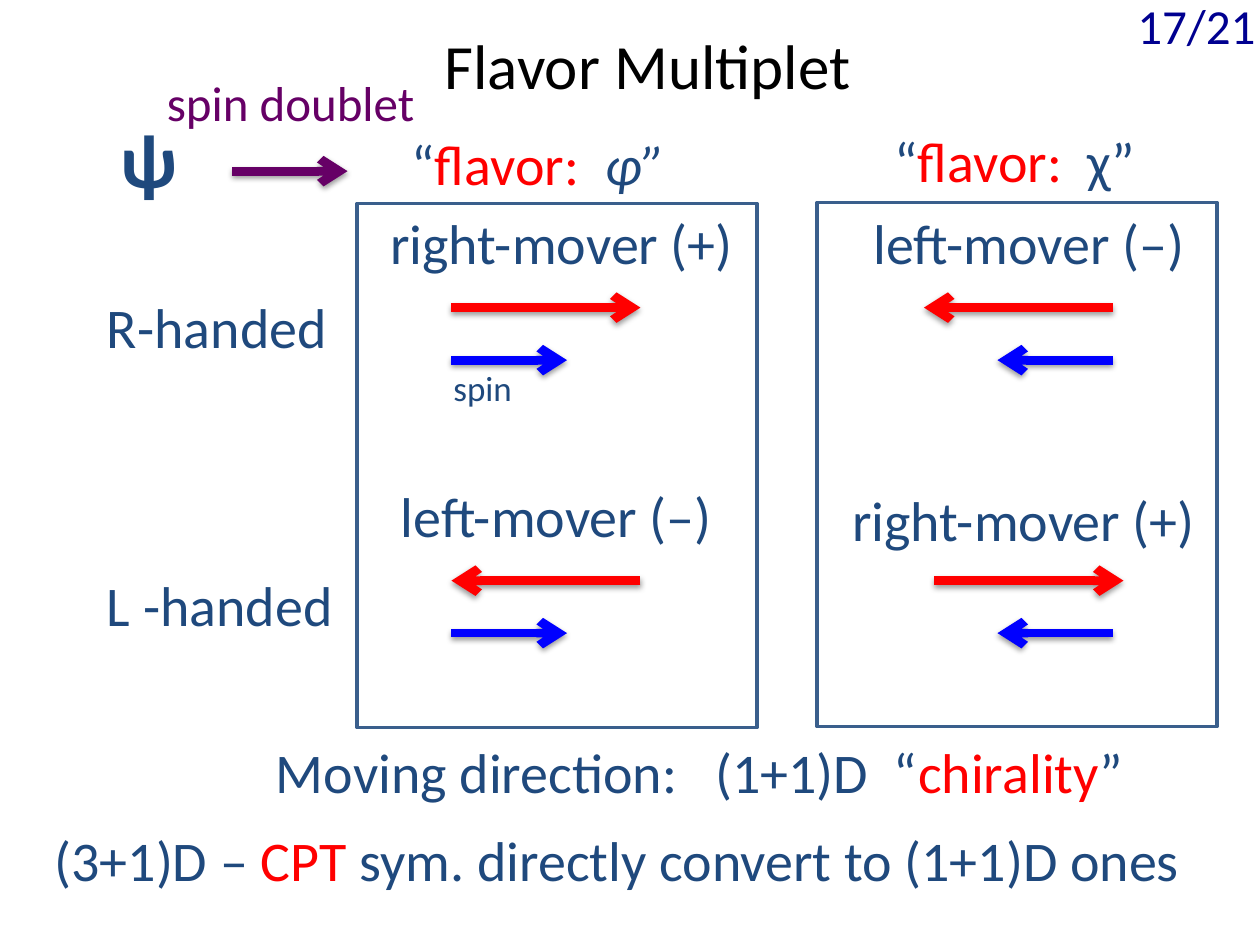
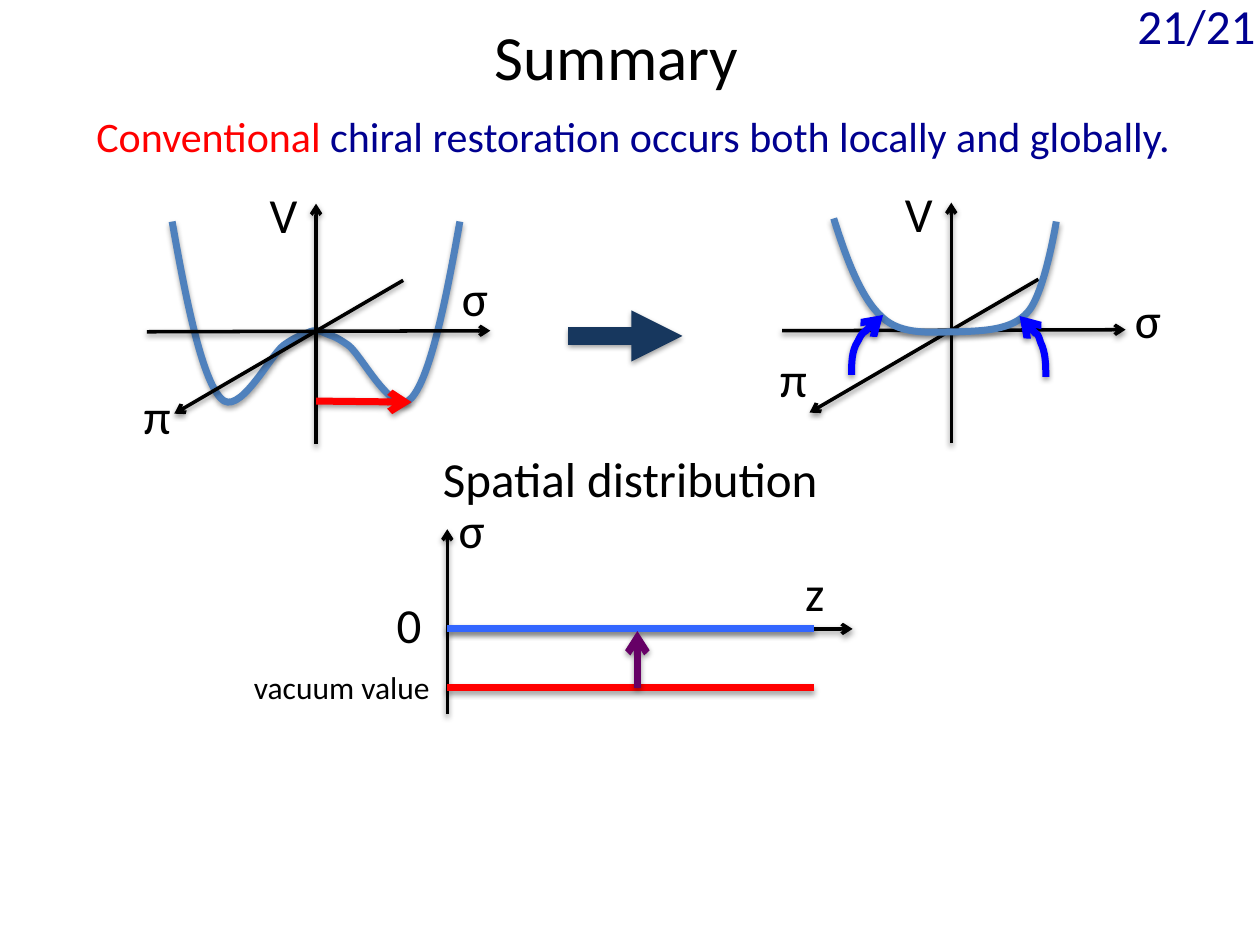
from lxml import etree
from pptx import Presentation
from pptx.dml.color import RGBColor
from pptx.enum.shapes import MSO_CONNECTOR, MSO_SHAPE
from pptx.enum.text import MSO_ANCHOR, PP_ALIGN
from pptx.oxml.ns import qn
from pptx.util import Inches, Pt

STRAIGHT = MSO_CONNECTOR.STRAIGHT
RECTANGLE = MSO_SHAPE.RECTANGLE
MIDDLE = MSO_ANCHOR.MIDDLE
LEFT, CENTER, RIGHT = PP_ALIGN.LEFT, PP_ALIGN.CENTER, PP_ALIGN.RIGHT

FONT = "Calibri"
COLUMNS, ROWS = 120, 90
CELL = Inches(10) / COLUMNS
TITLE_ONLY = 5

COLORS = {
    "black": "000000",
    "slate": "1F497D",
    "frame": "3A5F8C",
    "curve": "4F81BD",
    "navy": "000090",
    "dark": "17375E",
    "red": "FF0000",
    "blue": "0000FF",
    "sky": "3366FF",
    "purple": "660066",
}

WELL_HALF = [
    (13.7, -10.4), (12.4, -3), (10.9, 4.4), (9.1, 6.4), (7.4, 8.4), (4.4, 2.4), (3.1, 1.4),
    (1.7, 0.4), (1.4, 0.5), (0.8, 0.2), (0.4, 0), (0.2, 0), (0, 0),
]
FLAT_BOWL = [
    (-11.2, -10.6), (-10, -6.8), (-8.6, -3), (-6.6, -1.2), (-4.7, 0.6), (-1.7, 0.2), (0.6, 0.2),
    (2.9, 0.1), (5.8, 0.1), (7.3, -1.7), (8.9, -3.5), (10, -10.3), (10, -10.3),
]
LEFT_LIFT = [
    (-9.5, 4.3), (-9.5, 3.2), (-9.5, 2), (-8.9, 1.1), (-8.4, 0.1), (-6.5, -1.4), (-6.5, -1.4),
]
RIGHT_LIFT = [
    (9, 4.5), (9, 3.4), (9, 2.2), (8.5, 1.2), (8.2, 0.2), (6.5, -1.3), (6.5, -1.3),
]


def cells(*counts):
    return [round(count * CELL) for count in counts]


def rgb(name):
    return RGBColor.from_string(COLORS[name])


def shift(points, origin):
    return [(origin[0] + x, origin[1] + y) for x, y in points]


def set_font(font, size, color):
    font.name = FONT
    font.size = Pt(size)
    font.color.rgb = rgb(color)


def add_text(page, left, top, width, content, size=32, color="slate", align=LEFT, bold=None):
    spans = [(content, color)] if isinstance(content, str) else content
    height = size * 0.2 + 1.2
    box = page.shapes.add_textbox(*cells(left, top, width, height))
    box.text_frame.word_wrap = True
    para = box.text_frame.paragraphs[0]
    para.alignment = align
    set_font(para.font, size, color)
    para.font.bold = bold
    for text, span_color, *style in spans:
        span = para.add_run()
        span.text = text
        if span_color != color:
            span.font.color.rgb = rgb(span_color)
        if "italic" in style:
            span.font.italic = True
    return box


def add_page(deck, title, number, left, top, width):
    page = deck.slides.add_slide(deck.slide_layouts[TITLE_ONLY])
    heading = page.shapes.title
    heading.left, heading.top, heading.width, heading.height = cells(left, top, width, 8.5)
    heading.text_frame.text = title
    heading.text_frame.vertical_anchor = MIDDLE
    para = heading.text_frame.paragraphs[0]
    para.alignment = CENTER
    set_font(para.font, 36, "black")
    counter = add_text(page, 105, -1, 16, number, 28, "navy", RIGHT)
    counter.text_frame.margin_right = Inches(0.12)
    return page


def style_stroke(shape, color, width, head):
    shape.line.color.rgb = rgb(color)
    shape.line.width = Pt(width)
    properties = shape._element.spPr
    if head:
        etree.SubElement(properties.find(qn("a:ln")), qn("a:tailEnd"), type=head)
    effects = etree.SubElement(properties, qn("a:effectLst"))
    shadow = etree.SubElement(
        effects, qn("a:outerShdw"), blurRad="40000", dist="20000", dir="5400000", rotWithShape="0"
    )
    shade = etree.SubElement(shadow, qn("a:srgbClr"), val=COLORS["black"])
    etree.SubElement(shade, qn("a:alpha"), val="38000")


def add_line(page, start, end, color="black", width=2, head="arrow"):
    line = page.shapes.add_connector(STRAIGHT, *cells(*start, *end))
    style_stroke(line, color, width, head)


def add_curve(page, points, color="curve", head=None):
    builder = page.shapes.build_freeform(*cells(*points[0]))
    builder.add_line_segments([cells(*point) for point in points[1:]], close=False)
    curve = builder.convert_to_shape()
    steps = list(curve._element.iter(qn("a:lnTo")))
    for first in range(0, len(steps), 3):
        bend = etree.Element(qn("a:cubicBezTo"))
        steps[first].addprevious(bend)
        for step in steps[first:first + 3]:
            bend.append(step[0])
            step.getparent().remove(step)
    curve.fill.background()
    style_stroke(curve, color, 4, head)


def add_panel(page, left, top):
    panel = page.shapes.add_shape(RECTANGLE, *cells(left, top, 38.1, 49.9))
    panel.fill.background()
    panel.line.color.rgb = rgb("frame")
    panel.line.width = Pt(2)
    panel.shadow.inherit = False


def add_mover(page, row, label, label_at, motion, spin):
    add_text(page, *label_at, 36, label)
    for (start, end), color, offset in ((motion, "red", 0), (spin, "blue", 5)):
        add_line(page, (start, row + offset), (end, row + offset), color, 5)


def add_potential_axes(page, origin, sigma_at, pi_at):
    for start, end in (
        ((-16.1, 0.1), (16.6, 0)),
        ((8.3, -4.8), (-13.5, 7.9)),
        ((0, 10.8), (0, -12.1)),
    ):
        add_line(page, *shift([start, end], origin))
    labels = (("V", (-5.6, -14.5)), ("σ", sigma_at), ("π", pi_at))
    for symbol, place in labels:
        add_text(page, *shift([place], origin)[0], 10, symbol, 28, "black")


def build_flavor_page(deck):
    page = add_page(deck, "Flavor Multiplet ", "17/21", 4.7, 1.9, 115.3)
    right_handed, left_handed = 29.3, 55.3
    spin_right, spin_left = (43, 54), (106, 95)
    for left, top in ((34, 19.4), (77.8, 19.3)):
        add_panel(page, left, top)
    add_mover(page, right_handed, "right-mover (+)", (36, 19.3), (43, 61), spin_right)
    add_mover(page, left_handed, "left-mover (–)", (37, 45.3), (61, 43), spin_right)
    add_mover(page, right_handed, "left-mover (–)", (82, 19.3), (106, 88), spin_left)
    add_mover(page, left_handed, "right-mover (+)", (80, 45.6), (89, 107), spin_left)
    add_text(page, 9, 27.3, 28, "R-handed")
    add_text(page, 9, 53.7, 28, "L -handed")
    add_text(page, 42, 34.3, 13, "spin", 20)
    add_text(page, 38, 11.7, 33,
             [("“", "slate"), ("flavor:  ", "red"), ("φ”", "slate", "italic")])
    add_text(page, 84, 11.5, 29, [("“", "slate"), ("flavor:  ", "red"), ("χ”", "slate")])
    add_text(page, 25.1, 69.6, 86,
             [("Moving direction:   (1+1)D  “", "slate"), ("chirality", "red"), ("”", "slate")])
    add_text(page, 4, 78, 113,
             [("(3+1)D – ", "slate"), ("CPT", "red"),
              (" sym. directly convert to (1+1)D ones", "slate")])
    add_text(page, 10.3, 10, 9.7, "ψ", 44, bold=True)
    add_line(page, (22.1, 16.3), (33.1, 16.3), "purple", 5)
    add_text(page, 14.7, 6.3, 30.6, "spin doublet", 28, "purple")


def add_distribution(page):
    axis, zero, vacuum, end, lift = 42.6, 59.9, 65.5, 77.5, 60.7
    add_line(page, (axis, 68), (axis, 50.4))
    add_line(page, (axis, zero), (81.2, zero))
    for level, color in ((vacuum, "red"), (zero, "sky")):
        add_line(page, (axis, level), (end, level), color, 4, None)
    add_line(page, (lift, vacuum), (lift, 60.1), "purple", 4)
    for symbol, left, top in (("σ", 42.5, 47), ("0", 36.6, 56), ("z", 75.5, 53)):
        add_text(page, left, top, 10, symbol, 28, "black")
    add_text(page, 23, 63, 23.6, "vacuum value", 18, "black")
    add_text(page, 41, 42.1, 45, "Spatial distribution", 28, "black")


def build_summary_page(deck):
    page = add_page(deck, "Summary ", "21/21", 13, 1, 92.8)
    add_text(page, 8, 9.9, 109,
             [("Conventional ", "red"),
              ("chiral restoration occurs both locally and globally.", "navy")], 24, "navy")
    broken, restored = (30.1, 31.5), (90.6, 31.4)
    for side in (-1, 1):
        add_curve(page, shift([(side * x, y) for x, y in WELL_HALF], broken))
    add_potential_axes(page, broken, (12.7, -6.6), (-17.6, 4.6))
    add_line(page, *shift([(0, 6.7), (9.1, 6.8)], broken), "red", 4)
    add_potential_axes(page, restored, (16.3, -4.4), (-17.5, 1.2))
    add_curve(page, shift(FLAT_BOWL, restored))
    for lift in (LEFT_LIFT, RIGHT_LIFT):
        add_curve(page, shift(lift, restored), "blue", "arrow")
    add_distribution(page)
    add_line(page, (54.1, 32), (65, 32), "dark", 9.75, "triangle")


def main():
    deck = Presentation()
    deck.slide_width, deck.slide_height = cells(COLUMNS, ROWS)
    build_flavor_page(deck)
    build_summary_page(deck)
    deck.save("out.pptx")


if __name__ == "__main__":
    main()
